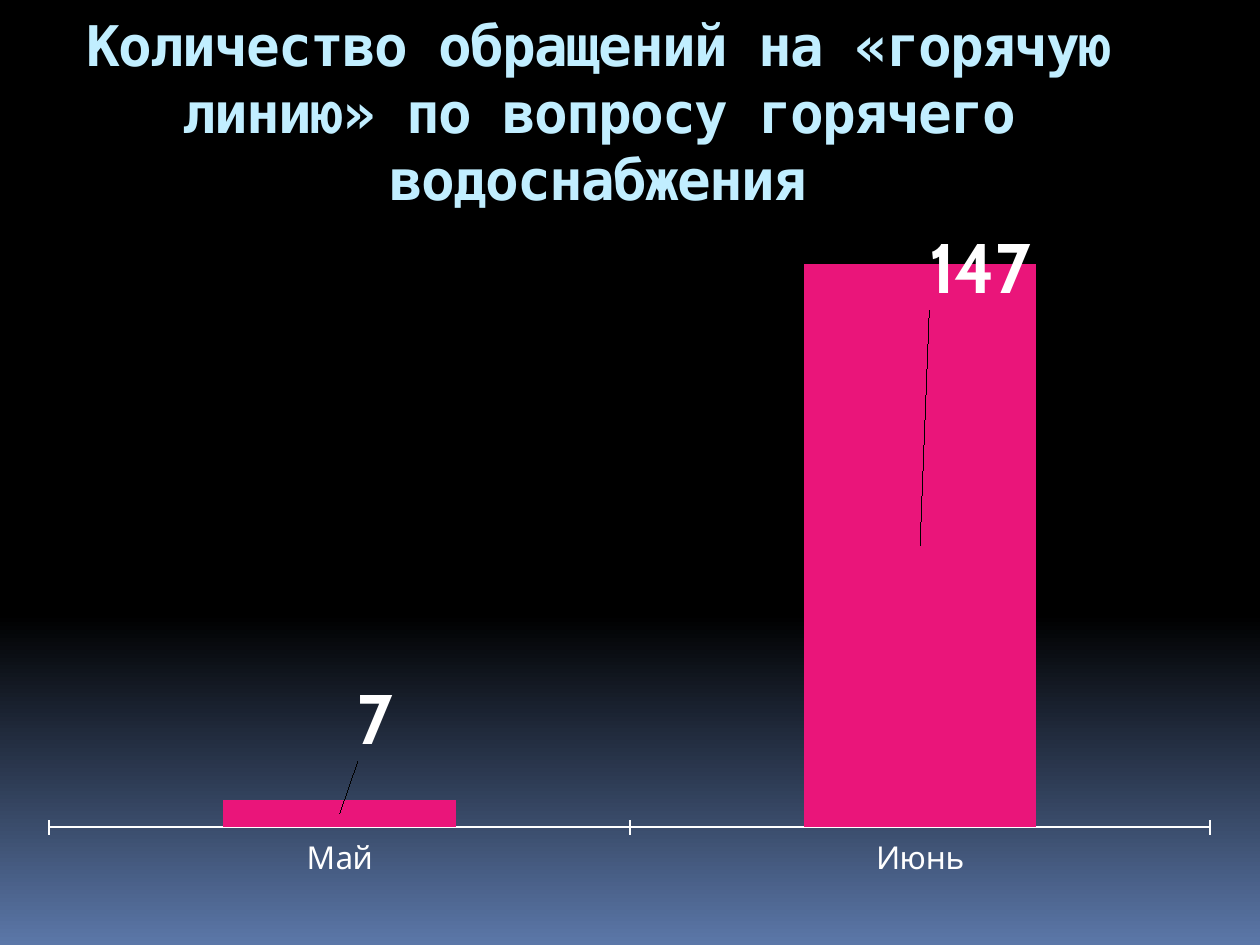
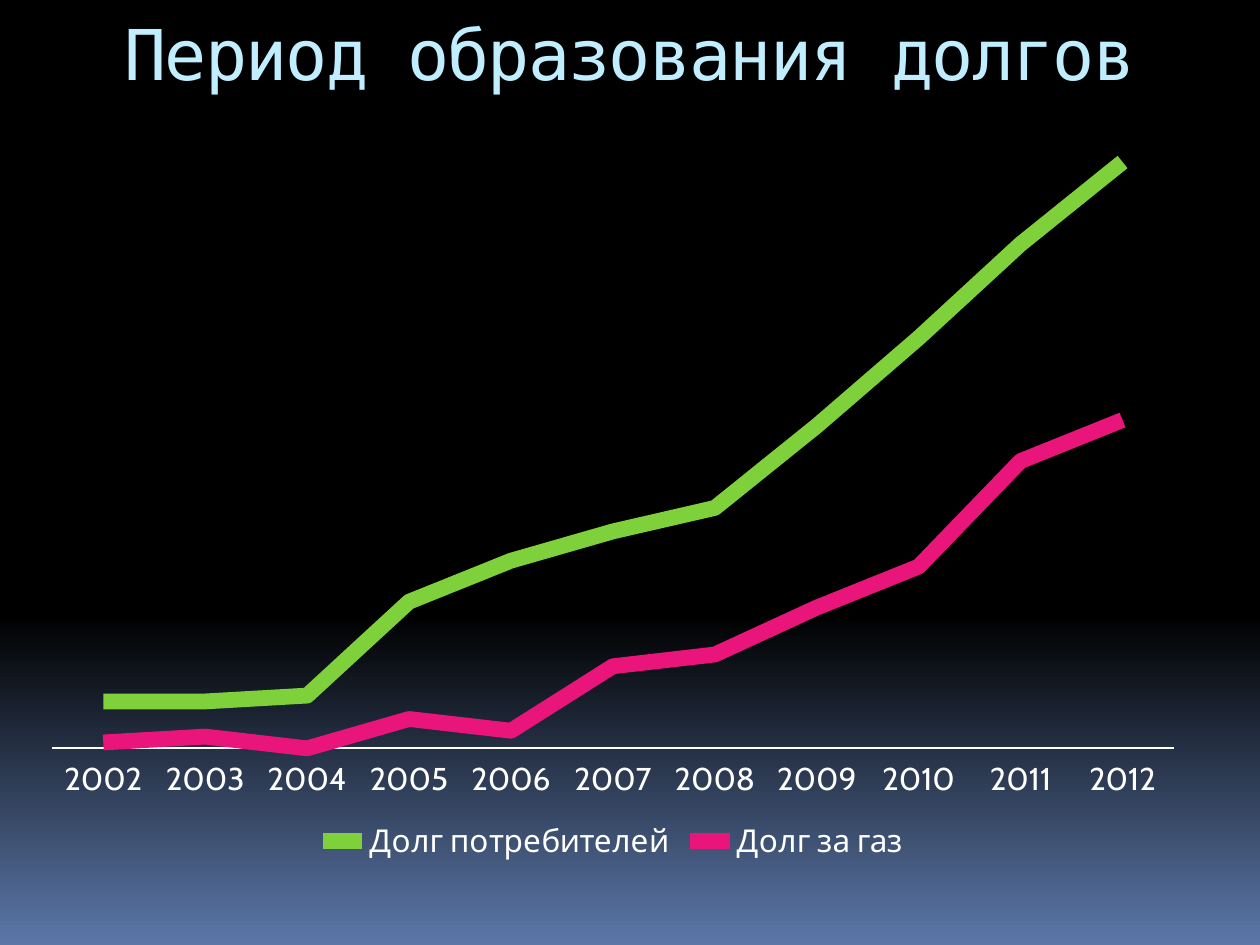
import copy

import lxml.etree
import pptx
import pptx.chart.data
import pptx.dml.color
import pptx.enum.chart
import pptx.enum.text
import pptx.oxml
import pptx.oxml.ns
import pptx.util

Inches, Pt = pptx.util.Inches, pptx.util.Pt
Kind = pptx.enum.chart.XL_CHART_TYPE
Tick = pptx.enum.chart.XL_TICK_MARK
Label = pptx.enum.chart.XL_TICK_LABEL_POSITION

HUES = {"night": "000000", "dusk": "5B77A8", "title": "C1EEFF",
        "text": "FFFFFF", "green": "7FD13B", "pink": "EA157A"}
RGB = {name: pptx.dml.color.RGBColor.from_string(hue) for name, hue in HUES.items()}


def put(item, **vals):
    for name, val in vals.items():
        setattr(item, name, val)


def place(**parts):
    """Manual chart layout element from shares of the chart's size."""
    layout = pptx.oxml.parse_xml(
        f'<c:layout {pptx.oxml.ns.nsdecls("c")}><c:manualLayout/></c:layout>')
    for tag, val in parts.items():
        lxml.etree.SubElement(layout[0], pptx.oxml.ns.qn("c:" + tag), val=str(val))
    return layout


deck = pptx.Presentation()
put(deck, slide_width=Inches(10), slide_height=Inches(7.5))

# Shared background: black down to 65 %, then fading to blue
fill = deck.slide_master.background.fill
fill.gradient()
fill.gradient_angle = 270
stops = deck.slide_master.element.xpath("./p:cSld/p:bg//a:gsLst")[0]
stops.append(copy.deepcopy(stops[-1]))
for stop, (hue, pos) in zip(fill.gradient_stops,
                            [("night", 0), ("night", 0.65), ("dusk", 1)]):
    stop.color.rgb = RGB[hue]
    stop.position = pos

pages = [
    {"title": "Количество обращений на «горячую линию» по вопросу горячего водоснабжения",
     "head": (0, 0, 9.5, 1.25), "font": {"size": Pt(32), "bold": True},
     "kind": Kind.COLUMN_STACKED, "box": (0.23, 1.41, 9.53, 5.78),
     "plot": (0.017, 0.05, 0.967, 0.842), "top": 160, "tick": Tick.CROSS,
     "cats": ["Май", "Июнь"],
     "rows": [("Series 1", "pink", [7, 147])]},
    {"title": "Период образования долгов",
     "head": (0.5, 0, 9, 0.86), "font": {"size": Pt(40), "bold": False},
     "kind": Kind.LINE, "box": (0.23, 0.78, 9.27, 6.1),
     "plot": (0.02, 0.083, 0.96, 0.763), "top": 100, "tick": Tick.NONE,
     "cats": [str(year) for year in range(2002, 2013)],
     "rows": [("Долг потребителей", "green", [8, 8, 9, 25, 32, 37, 41, 55, 70, 86, 100]),
              ("Долг за газ", "pink", [1, 2, 0, 5, 3, 14, 16, 24, 31, 49, 56])]},
]

for page in pages:
    slide = deck.slides.add_slide(deck.slide_layouts[6])

    # Title
    frame = slide.shapes.add_textbox(*map(Inches, page["head"])).text_frame
    put(frame, word_wrap=True, margin_top=Inches(0.08),
        vertical_anchor=pptx.enum.text.MSO_ANCHOR.TOP)
    para = frame.paragraphs[0]
    para.alignment = pptx.enum.text.PP_ALIGN.CENTER
    run = para.add_run()
    run.text = page["title"]
    put(run.font, name="DejaVu Sans Mono", **page["font"])
    run.font.color.rgb = RGB["title"]
    run.font._element.set("spc", "-100")

    # Chart and axes
    data = pptx.chart.data.CategoryChartData()
    data.categories = page["cats"]
    for name, hue, vals in page["rows"]:
        data.add_series(name, vals)
    chart = slide.shapes.add_chart(page["kind"], *map(Inches, page["box"]), data).chart
    put(chart, has_title=False, has_legend=len(page["rows"]) > 1)
    put(chart.font, name="Cabin", size=Pt(18))
    chart.font.color.rgb = RGB["text"]
    put(chart.value_axis, visible=False, has_major_gridlines=False,
        minimum_scale=0, maximum_scale=page["top"])
    axis = chart.category_axis
    put(axis, has_major_gridlines=False, major_tick_mark=page["tick"],
        minor_tick_mark=Tick.NONE, tick_label_position=Label.LOW)
    axis.format.line.color.rgb = RGB["text"]
    axis.format.line.width = Pt(1)
    if chart.has_legend:
        put(chart.legend, include_in_layout=False,
            position=pptx.enum.chart.XL_LEGEND_POSITION.BOTTOM)

    area = chart.element.xpath(".//c:plotArea")[0]
    for old in area.xpath("./c:layout"):
        area.remove(old)
    left, top, wide, high = page["plot"]
    area.insert(0, place(layoutTarget="inner", xMode="edge", yMode="edge",
                         x=left, y=top, w=wide, h=high))

    # Series
    plot = chart.plots[0]
    plot.vary_by_categories = False
    for line, (name, hue, vals) in zip(plot.series, page["rows"]):
        if page["kind"] == Kind.LINE:
            line.smooth = False
            line.marker.style = pptx.enum.chart.XL_MARKER_STYLE.NONE
            line.format.line.color.rgb = RGB[hue]
            line.format.line.width = Pt(9)
            continue
        put(plot, gap_width=150, overlap=100)
        line.format.fill.solid()
        line.format.fill.fore_color.rgb = RGB[hue]
        line.data_labels.show_value = True
        shifts = [(0.03, -0.13), (0.05, -0.38)]
        for spot, (right, down) in enumerate(shifts):
            font = line.points[spot].data_label.font
            put(font, name="Cabin", size=Pt(40), bold=True)
            font.color.rgb = RGB["text"]
            mark = chart.element.xpath(".//c:dLbl")[spot]
            mark.insert(1, place(x=right, y=down))

deck.save("out.pptx")
